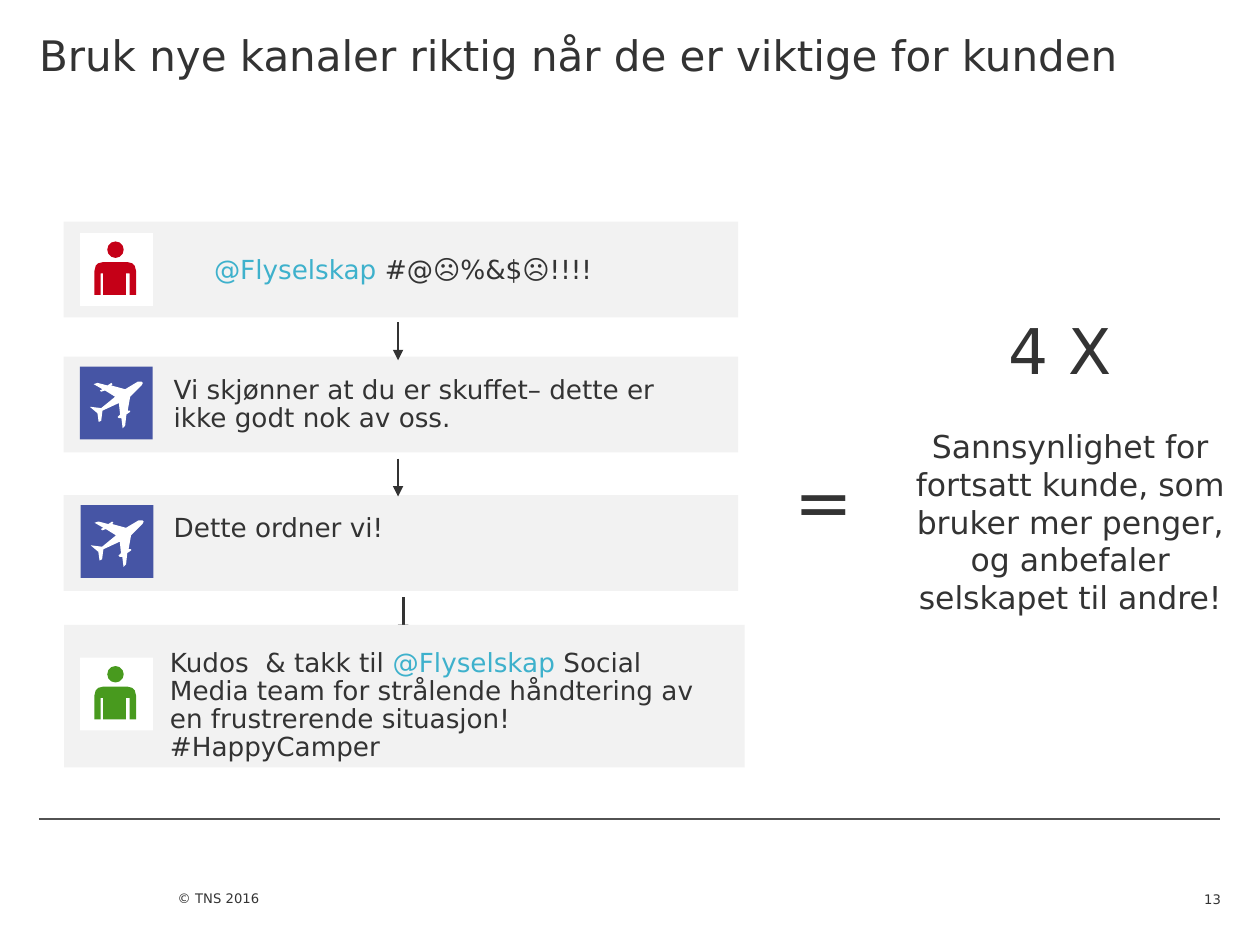
from dataclasses import dataclass

from lxml import etree
from pptx import Presentation
from pptx.dml.color import RGBColor
from pptx.enum.shapes import MSO_CONNECTOR, MSO_SHAPE
from pptx.enum.text import MSO_ANCHOR, MSO_AUTO_SIZE, PP_ALIGN
from pptx.oxml.ns import qn
from pptx.util import Pt

RECTANGLE, OVAL = MSO_SHAPE.RECTANGLE, MSO_SHAPE.OVAL
STRAIGHT = MSO_CONNECTOR.STRAIGHT
TOP, BOTTOM = MSO_ANCHOR.TOP, MSO_ANCHOR.BOTTOM
LEFT, CENTER, RIGHT = PP_ALIGN.LEFT, PP_ALIGN.CENTER, PP_ALIGN.RIGHT
NO_AUTOSIZE = MSO_AUTO_SIZE.NONE


@dataclass(frozen=True)
class Theme:
    """Colours, font and type sizes of the slide."""

    font: str = "DejaVu Sans"
    ink: str = "333333"
    rule: str = "525252"
    mention: str = "3EB1CC"
    panel: str = "F2F2F2"
    white: str = "FFFFFF"
    angry: str = "C50017"
    happy: str = "489A1E"
    airline: str = "4655A5"
    title_size: float = 24
    message_size: float = 15
    factor_size: float = 36
    equals_size: float = 40
    result_size: float = 18
    footer_size: float = 7.5


THEME = Theme()
ICON_UNIT = Pt(0.72)
TILE = 41.6
PANEL_LEFT, PANEL_WIDTH, PANEL_HEIGHT = 36.4, 385.4, 54.7
DEFAULT_INSETS = (7.2, 3.6, 7.2, 3.6)
NO_INSETS = (0, 0, 0, 0)
TORSO = [
    (7, 23), (3, 24), (1, 26), (0, 30), (0, 49), (5, 49), (5, 32), (7, 32),
    (7, 49), (25, 49), (25, 32), (28, 32), (28, 49), (33, 49), (33, 30),
    (32, 26), (30, 24), (26, 23),
]
PLANE = [
    (50, 13), (49, 12), (46, 12), (41, 15), (36, 18), (25, 15), (26, 14),
    (25, 13), (22, 15), (14, 13), (11, 14), (18, 18), (16, 19), (17, 20),
    (20, 19), (28, 24), (17, 33), (9, 32), (8, 32), (14, 37), (15, 44),
    (17, 43), (18, 35), (31, 29), (32, 38), (30, 40), (31, 41), (33, 41),
    (34, 49), (36, 47), (37, 38), (40, 36), (40, 35), (38, 35), (40, 24),
    (46, 18), (49, 15),
]


def paint(shape, color):
    """Give a shape a plain fill without line or shadow."""
    shape.shadow.inherit = False
    shape.fill.solid()
    shape.fill.fore_color.rgb = RGBColor.from_string(color)
    shape.line.fill.background()


def add_block(slide, preset, left, top, width, height, color):
    """Add a filled preset shape."""
    block = slide.shapes.add_shape(preset, Pt(left), Pt(top), Pt(width), Pt(height))
    paint(block, color)


def add_outline(slide, left, top, points, color):
    """Add a closed outline, given in hundredths of an inch."""
    builder = slide.shapes.build_freeform(*points[0], scale=ICON_UNIT)
    builder.add_line_segments(points[1:], close=True)
    paint(builder.convert_to_shape(Pt(left), Pt(top)), color)


def add_person(slide, left, top, color):
    """Add a customer icon on a white tile."""
    add_block(slide, RECTANGLE, left, top, TILE, TILE, THEME.white)
    add_outline(slide, left + 8.2, top, TORSO, color)
    add_block(slide, OVAL, left + 15.5, top + 4.8, 9.4, 9.4, color)


def add_plane(slide, left, top):
    """Add an airline icon on a coloured tile."""
    add_block(slide, RECTANGLE, left, top, TILE, TILE, THEME.airline)
    add_outline(slide, left, top, PLANE, THEME.white)


def add_line(slide, start, end, color, width, arrow=False):
    """Add a straight line, with an arrowhead at its end if asked."""
    line = slide.shapes.add_connector(STRAIGHT, *map(Pt, start + end))
    line.line.color.rgb = RGBColor.from_string(color)
    line.line.width = Pt(width)
    if arrow:
        etree.SubElement(line.line._get_or_add_ln(), qn("a:tailEnd"), type="triangle")
    etree.SubElement(line._element.spPr, qn("a:effectLst"))


def set_frame(frame, insets, anchor=TOP, wrap=True):
    """Set the insets, anchor and wrapping of a text frame."""
    frame.auto_size = NO_AUTOSIZE
    frame.word_wrap = wrap
    frame.vertical_anchor = anchor
    frame.margin_left, frame.margin_top, frame.margin_right, frame.margin_bottom = map(
        Pt, insets
    )


def style_run(run, size, color=THEME.ink):
    """Format one run in the theme font."""
    run.font.name = THEME.font
    run.font.size = Pt(size)
    run.font.color.rgb = RGBColor.from_string(color)


def write(paragraph, parts, size, align=LEFT, line_spacing=None):
    """Write coloured parts into a paragraph."""
    paragraph.alignment = align
    if line_spacing:
        paragraph.line_spacing = Pt(line_spacing)
    for text, color in parts:
        run = paragraph.add_run()
        run.text = text
        style_run(run, size, color)


def add_text(slide, box, parts, size, align=LEFT, line_spacing=None,
             insets=DEFAULT_INSETS, anchor=TOP, wrap=True):
    """Add a text box with one paragraph and return its frame."""
    frame = slide.shapes.add_textbox(*map(Pt, box)).text_frame
    set_frame(frame, insets, anchor, wrap)
    write(frame.paragraphs[0], parts, size, align, line_spacing)
    return frame


def set_title(slide, text):
    """Place and format the title."""
    title = slide.shapes.title
    title.left, title.top, title.width, title.height = map(Pt, (22.3, 0, 674.7, 81.4))
    set_frame(title.text_frame, (0, 16.6, 0, 0))
    write(title.text_frame.paragraphs[0], [(text, THEME.ink)], THEME.title_size)


def add_dialogue(slide):
    """Add the conversation between customer and airline."""
    ink, size = THEME.ink, THEME.message_size
    for top in (126.7, 203.8, 283):
        add_block(slide, RECTANGLE, PANEL_LEFT, top, PANEL_WIDTH, PANEL_HEIGHT, THEME.panel)
    for x, top in ((227.5, 184.3), (227.5, 262.1), (230.4, 341.3)):
        add_line(slide, (x, top), (x, top + 21.6), ink, 1.5, arrow=True)
    add_block(slide, RECTANGLE, 36.7, 357.1, 388.8, 81.4, THEME.panel)

    add_person(slide, 45.8, 133.2, THEME.angry)
    add_plane(slide, 45.6, 209.5)
    add_plane(slide, 46.1, 288.7)
    add_person(slide, 45.8, 375.8, THEME.happy)

    complaint = [("@Flyselskap ", THEME.mention), ("#@☹%&$☹!!!!", ink)]
    apology = [("Vi skjønner at du er skuffet– dette er ikke godt nok av oss.", ink)]
    promise = [("Dette ordner vi!", ink)]
    praise = [
        ("Kudos  & takk til ", ink),
        ("@Flyselskap", THEME.mention),
        (" Social Media team for strålende håndtering av en frustrerende "
         "situasjon! #HappyCamper", ink),
    ]
    add_text(slide, (115.2, 141.1, 353.5, 25.2), complaint, size)
    add_text(slide, (92.2, 211.7, 309.6, 39.6), apology, size, line_spacing=16)
    add_text(slide, (92.2, 290.9, 309.6, 23.8), promise, size, line_spacing=16)
    add_text(slide, (90, 367.9, 331.9, 61.9), praise, size, line_spacing=16)


def add_result(slide):
    """Add the equals sign and the outcome for the airline."""
    ink = THEME.ink
    add_text(slide, (447.1, 257.8, 47.5, 55.4), [("=", ink)], THEME.equals_size, wrap=False)
    frame = add_text(slide, (516.2, 177.8, 190.8, 252), [("4 X ", ink)],
                     THEME.factor_size, CENTER, insets=NO_INSETS)
    outcome = frame.add_paragraph()
    outcome.space_before = Pt(23)
    write(outcome, [("Sannsynlighet for fortsatt kunde, som bruker mer penger, "
                     "og anbefaler selskapet til andre!", ink)], THEME.result_size, CENTER)


def add_footer(slide):
    """Add the rule, the copyright line and the page number."""
    add_line(slide, (22.3, 468), (697, 468), THEME.rule, 0.75)
    add_text(slide, (101.5, 498.2, 200.2, 41.8), [("© TNS 2016", THEME.ink)],
             THEME.footer_size, insets=(0, 0, 0, 22.3), anchor=BOTTOM)
    add_text(slide, (658.1, 498.2, 39.6, 20.2), [("13", THEME.ink)],
             THEME.footer_size, RIGHT, insets=NO_INSETS, anchor=BOTTOM)


def main():
    """Build and save the slide."""
    deck = Presentation()
    deck.slide_width, deck.slide_height = Pt(720), Pt(540)
    slide = deck.slides.add_slide(deck.slide_layouts[5])
    set_title(slide, "Bruk nye kanaler riktig når de er viktige for kunden")
    add_dialogue(slide)
    add_result(slide)
    add_footer(slide)
    deck.save("out.pptx")


if __name__ == "__main__":
    main()
